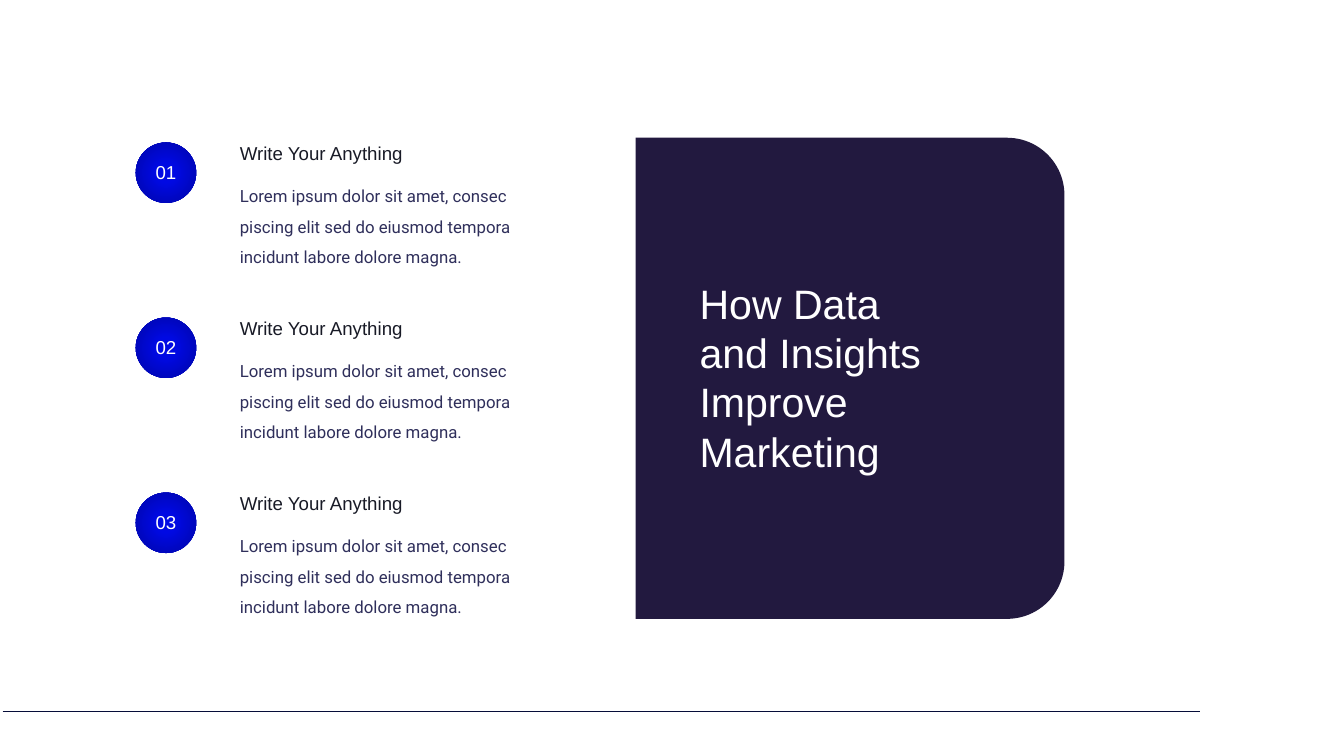
from dataclasses import dataclass

from pptx import Presentation
from pptx.dml.color import RGBColor
from pptx.enum.shapes import MSO_CONNECTOR, MSO_SHAPE
from pptx.enum.text import MSO_ANCHOR, MSO_AUTO_SIZE, PP_ALIGN
from pptx.oxml import parse_xml
from pptx.oxml.ns import nsdecls
from pptx.util import Emu, Pt

# Content
TITLE = "How Data and Insights Improve Marketing"
BODY = "Lorem ipsum dolor sit amet, consec piscing elit sed do eiusmod tempora incidunt labore dolore magna."
POINTS = [
    ("01", "Write Your Anything", BODY),
    ("02", "Write Your Anything", BODY),
    ("03", "Write Your Anything", BODY),
]


@dataclass(frozen=True)
class Theme:
    heading_font: str = "Arial"
    body_font: str = "Roboto"
    title_size: int = 44
    heading_size: int = 20
    body_size: int = 18
    white: str = "FFFFFF"
    heading: str = "181A26"
    body: str = "2F2F5B"
    panel: str = "22193F"
    rule: str = "060D39"
    badge_stops: tuple = ((0, "0009E3"), (23, "0009E3"), (69, "0007BF"), (97, "0007B2"))


THEME = Theme()

# Layout in px, 100 to the inch
EMU_PER_PX = 9144
SLIDE_W, SLIDE_H = 2000, 1125
BADGE_LEFT, BADGE_SIZE = 202, 90
FIRST_TOP, LAST_TOP = 212, 733
TEXT_LEFT = 347
PANEL = (907, 244, 716, 638)


def px(*lengths):
    return [Emu(round(length * EMU_PER_PX)) for length in lengths]


def fill_text(holder, text, font, size, color, align=PP_ALIGN.LEFT, spacing=1.0):
    frame = holder.text_frame
    frame.word_wrap = True
    frame.auto_size = MSO_AUTO_SIZE.SHAPE_TO_FIT_TEXT
    frame.vertical_anchor = MSO_ANCHOR.TOP
    paragraph = frame.paragraphs[0]
    paragraph.alignment = align
    paragraph.line_spacing = spacing
    run = paragraph.add_run()
    run.text = text
    run.font.name = font
    run.font.size = Pt(size)
    run.font.color.rgb = RGBColor.from_string(color)


def add_badge(slide, number, top):
    badge = slide.shapes.add_group_shape()
    disc = badge.shapes.add_shape(MSO_SHAPE.OVAL, *px(BADGE_LEFT, top, BADGE_SIZE, BADGE_SIZE))
    disc.shadow.inherit = False
    disc.line.fill.background()
    stops = "".join(
        f'<a:gs pos="{at * 1000}"><a:srgbClr val="{color}"/></a:gs>'
        for at, color in THEME.badge_stops
    )
    disc._element.spPr.prstGeom.addnext(parse_xml(
        f'<a:gradFill {nsdecls("a")}><a:gsLst>{stops}</a:gsLst><a:path path="circle">'
        '<a:fillToRect l="50000" t="50000" r="50000" b="50000"/></a:path></a:gradFill>'
    ))
    label = badge.shapes.add_textbox(*px(BADGE_LEFT, top + 23, BADGE_SIZE, 44))
    fill_text(label, number, THEME.heading_font, THEME.heading_size, THEME.white, PP_ALIGN.CENTER)


def add_point(slide, number, heading, body, top):
    add_badge(slide, number, top)
    body_box = slide.shapes.add_textbox(*px(TEXT_LEFT, top + 45, 487, 141))
    fill_text(body_box, body, THEME.body_font, THEME.body_size, THEME.body, spacing=1.5)
    heading_box = slide.shapes.add_textbox(*px(TEXT_LEFT, top - 6, 452, 44))
    fill_text(heading_box, heading, THEME.heading_font, THEME.heading_size, THEME.heading)


def add_rule(slide):
    rule = slide.shapes.add_connector(MSO_CONNECTOR.STRAIGHT, *px(4, 1059, 1786, 1059))
    rule.line.color.rgb = RGBColor.from_string(THEME.rule)
    rule.line.width = Pt(0.5)
    rule._element.spPr.append(parse_xml(f'<a:effectLst {nsdecls("a")}/>'))


def add_title_panel(slide):
    panel = slide.shapes.add_shape(MSO_SHAPE.ROUND_2_SAME_RECTANGLE, *px(*PANEL))
    panel.rotation = 90
    panel.adjustments[0] = 0.134
    panel.adjustments[1] = 0
    panel.shadow.inherit = False
    panel.fill.solid()
    panel.fill.fore_color.rgb = RGBColor.from_string(THEME.panel)
    panel.line.fill.background()

    # The title sits in front of its panel
    title = slide.shapes.title
    title.left, title.top, title.width, title.height = px(1031, 409, 394, 306)
    fill_text(title, TITLE, THEME.heading_font, THEME.title_size, THEME.white)
    panel._element.addnext(title._element)


def main():
    deck = Presentation()
    deck.slide_width, deck.slide_height = px(SLIDE_W, SLIDE_H)
    slide = deck.slides.add_slide(deck.slide_layouts[5])

    add_rule(slide)
    pitch = (LAST_TOP - FIRST_TOP) / (len(POINTS) - 1)
    for index, (number, heading, body) in enumerate(POINTS):
        add_point(slide, number, heading, body, FIRST_TOP + index * pitch)
    add_title_panel(slide)

    deck.save("out.pptx")


if __name__ == "__main__":
    main()
